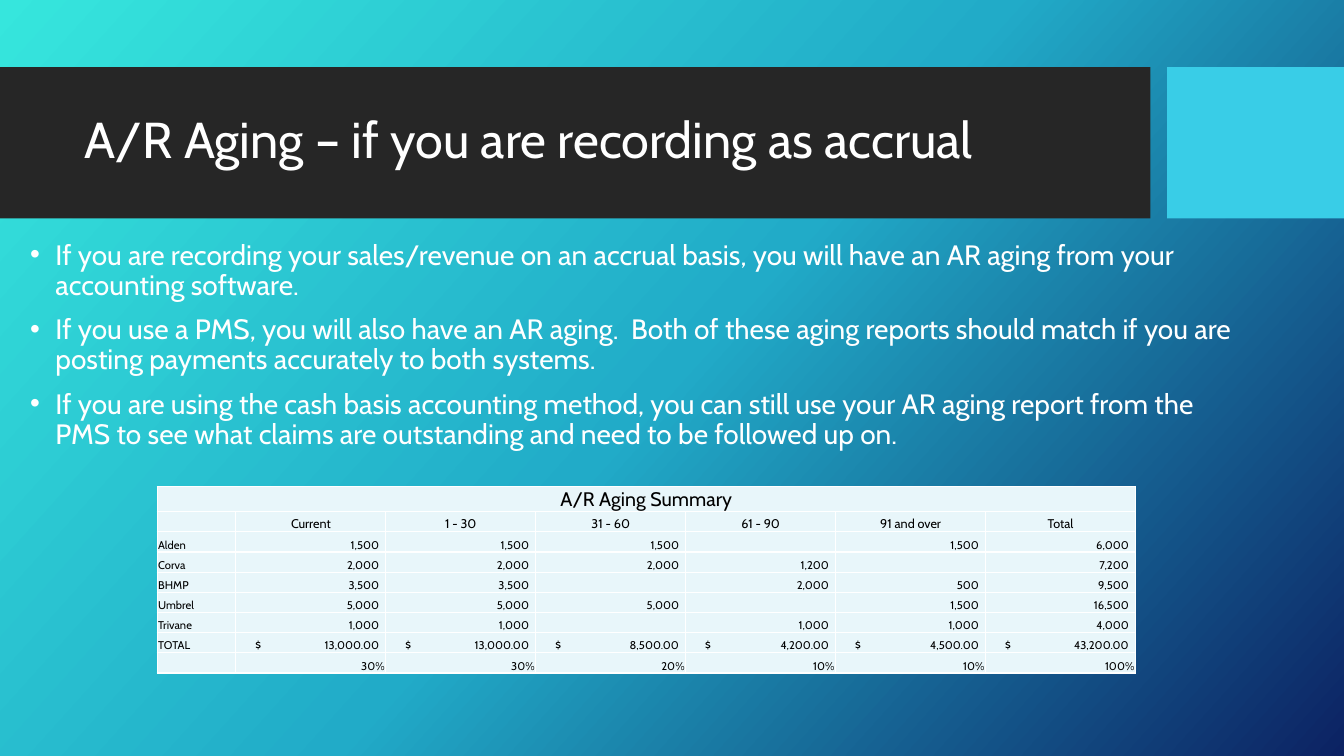
from copy import deepcopy
from dataclasses import dataclass

from lxml import etree
from pptx import Presentation
from pptx import util as u
from pptx.dml.color import RGBColor
from pptx.enum import shapes, text
from pptx.oxml.ns import qn

Pt = u.Pt
ALIGN = text.PP_ALIGN


@dataclass(frozen=True)
class Theme:
    font: str = "Cabin"
    light: str = "FFFFFF"
    ink: str = "000000"
    band: str = "262626"
    accent: str = "39CDE7"
    cell: str = "E8F6FA"
    gradient: tuple = ((0, "36E6DD"), (0.5, "21ABC8"), (1, "0C2263"))
    title_size: float = 36
    body_size: float = 20
    caption_size: float = 14
    header_size: float = 9
    cell_size: float = 8


TITLE = "A/R Aging – if you are recording as accrual"
POINTS = (
    "If you are recording your sales/revenue on an accrual basis, you will have an AR aging from your accounting software.",
    "If you use a PMS, you will also have an AR aging.  Both of these aging reports should match if you are posting payments accurately to both systems.",
    "If you are using the cash basis accounting method, you can still use your AR aging report from the PMS to see what claims are outstanding and need to be followed up on.",
)
CAPTION = "A/R Aging Summary"
PERIODS = ("", "Current", "1 - 30", "31 - 60", "61 - 90", "91 and over", "Total")
PAYERS = (
    ("Alden", "1,500", "1,500", "1,500", "", "1,500", "6,000"),
    ("Corva", "2,000", "2,000", "2,000", "1,200", "", "7,200"),
    ("BHMP", "3,500", "3,500", "", "2,000", "500", "9,500"),
    ("Umbrel", "5,000", "5,000", "5,000", "", "1,500", "16,500"),
    ("Trivane", "1,000", "1,000", "", "1,000", "1,000", "4,000"),
)
TOTALS = ("13,000.00", "13,000.00", "8,500.00", "4,200.00", "4,500.00", "43,200.00")
SHARES = ("", "30%", "30%", "20%", "10%", "10%", "100%")


class SlideBuilder:
    def __init__(self, page, theme):
        self.page = page
        self.theme = theme

    def background(self, angle):
        fill = self.page.background.fill
        fill.gradient()
        fill.gradient_angle = 360 - angle
        stop_list = self.page._element.find(".//" + qn("a:gsLst"))
        stop_list.append(deepcopy(stop_list[0]))
        for stop, (position, color) in zip(fill.gradient_stops, self.theme.gradient):
            stop.position = position
            stop.color.rgb = RGBColor.from_string(color)

    def bar(self, left, top, width, height, color):
        box = self.page.shapes.add_shape(
            shapes.MSO_SHAPE.RECTANGLE, Pt(left), Pt(top), Pt(width), Pt(height))
        box.shadow.inherit = False
        box.fill.solid()
        box.fill.fore_color.rgb = RGBColor.from_string(color)
        box.line.fill.background()
        self.page.shapes._spTree.insert(2, box._element)

    def span(self, para, words, size, color):
        span = para.add_run()
        span.text = words
        span.font.name = self.theme.font
        span.font.size = Pt(size)
        span.font.color.rgb = RGBColor.from_string(color)

    def place(self, box, left, top, width, height, anchor):
        box.left, box.top, box.width, box.height = map(Pt, (left, top, width, height))
        frame = box.text_frame
        frame.word_wrap = True
        frame.auto_size = text.MSO_AUTO_SIZE.NONE
        frame.vertical_anchor = anchor
        return frame

    def title(self, words, *area):
        frame = self.place(self.page.shapes.title, *area, text.MSO_ANCHOR.MIDDLE)
        para = frame.paragraphs[0]
        para.alignment = ALIGN.LEFT
        para.line_spacing = 0.9
        self.span(para, words, self.theme.title_size, self.theme.light)

    def bullets(self, points, *area):
        frame = self.place(self.page.placeholders[1], *area, text.MSO_ANCHOR.TOP)
        for index, words in enumerate(points):
            para = frame.add_paragraph() if index else frame.paragraphs[0]
            props = para._p.get_or_add_pPr()
            props.set("marL", str(Pt(18)))
            props.set("indent", str(-Pt(18)))
            etree.SubElement(props, qn("a:buChar"), char="•")
            para.alignment = ALIGN.LEFT
            para.line_spacing = 0.9
            para.space_before = Pt(10 if index else 0)
            self.span(para, words, self.theme.body_size, self.theme.light)

    def table(self, rows, left, top, widths, heights):
        grid = self.page.shapes.add_table(
            rows, len(widths), Pt(left), Pt(top), Pt(sum(widths)), Pt(sum(heights))).table
        grid.first_row = grid.horz_banding = False
        for column, width in zip(grid.columns, widths):
            column.width = Pt(width)
        for row, height in zip(grid.rows, heights):
            row.height = Pt(height)
        return grid

    def cell(self, cell, words, size, align, left=0.7, right=0.7, tab=None):
        cell.margin_left, cell.margin_right = Pt(left), Pt(right)
        cell.margin_top, cell.margin_bottom = Pt(0.7), 0
        cell.vertical_anchor = text.MSO_ANCHOR.BOTTOM
        props = cell._tc.get_or_add_tcPr()
        for side in ("a:lnL", "a:lnR", "a:lnT", "a:lnB"):
            line = etree.SubElement(props, qn(side), w=str(Pt(1)))
            paint = etree.SubElement(line, qn("a:solidFill"))
            etree.SubElement(paint, qn("a:srgbClr"), val=self.theme.light)
        cell.fill.solid()
        cell.fill.fore_color.rgb = RGBColor.from_string(self.theme.cell)
        para = cell.text_frame.paragraphs[0]
        if tab:
            tabs = etree.SubElement(para._p.get_or_add_pPr(), qn("a:tabLst"))
            etree.SubElement(tabs, qn("a:tab"), pos=str(Pt(tab)), algn="r")
        para.alignment = align
        if words:
            self.span(para, words, size, self.theme.ink)
        else:
            etree.SubElement(para._p, qn("a:endParaRPr"), sz=str(int(size * 100)))

    def aging_table(self, left, top):
        theme = self.theme
        name_width, period_width = 56.2, 107.1
        lines = [(CAPTION,) + ("",) * 6, PERIODS, *PAYERS,
                 ("TOTAL",) + tuple("$\t" + total for total in TOTALS), SHARES]
        grid = self.table(len(lines), left, top, [name_width] + [period_width] * 6,
                          [18] + [14.4] * (len(lines) - 1))
        grid.cell(0, 0).merge(grid.cell(0, 6))
        for r, line in enumerate(lines):
            for c, words in enumerate(line):
                size, align, options = theme.cell_size, ALIGN.RIGHT, {}
                if r == 0:
                    size, align = theme.caption_size, ALIGN.CENTER
                elif r == 1:
                    size, align = theme.header_size, ALIGN.CENTER
                elif c == 0:
                    align = ALIGN.LEFT
                elif words.startswith("$"):
                    align = ALIGN.LEFT
                    options = {"left": 14, "tab": period_width - 14 - 4.7}
                elif line is not SHARES:
                    options = {"right": 4.7}
                self.cell(grid.cell(r, c), words, size, align, **options)


def main():
    deck = Presentation()
    deck.slide_width, deck.slide_height = Pt(960), Pt(540)
    theme = Theme()
    slide = SlideBuilder(deck.slides.add_slide(deck.slide_layouts[1]), theme)
    slide.background(42)
    slide.bar(0, 48, 821.8, 108, theme.band)
    slide.bar(833.6, 48, 126.4, 108, theme.accent)
    slide.title(TITLE, 53.3, 59, 756.7, 85)
    slide.bullets(POINTS, 14.4, 168.5, 876.2, 183.6)
    slide.aging_table(112.3, 347.5)
    deck.save("out.pptx")


if __name__ == "__main__":
    main()
